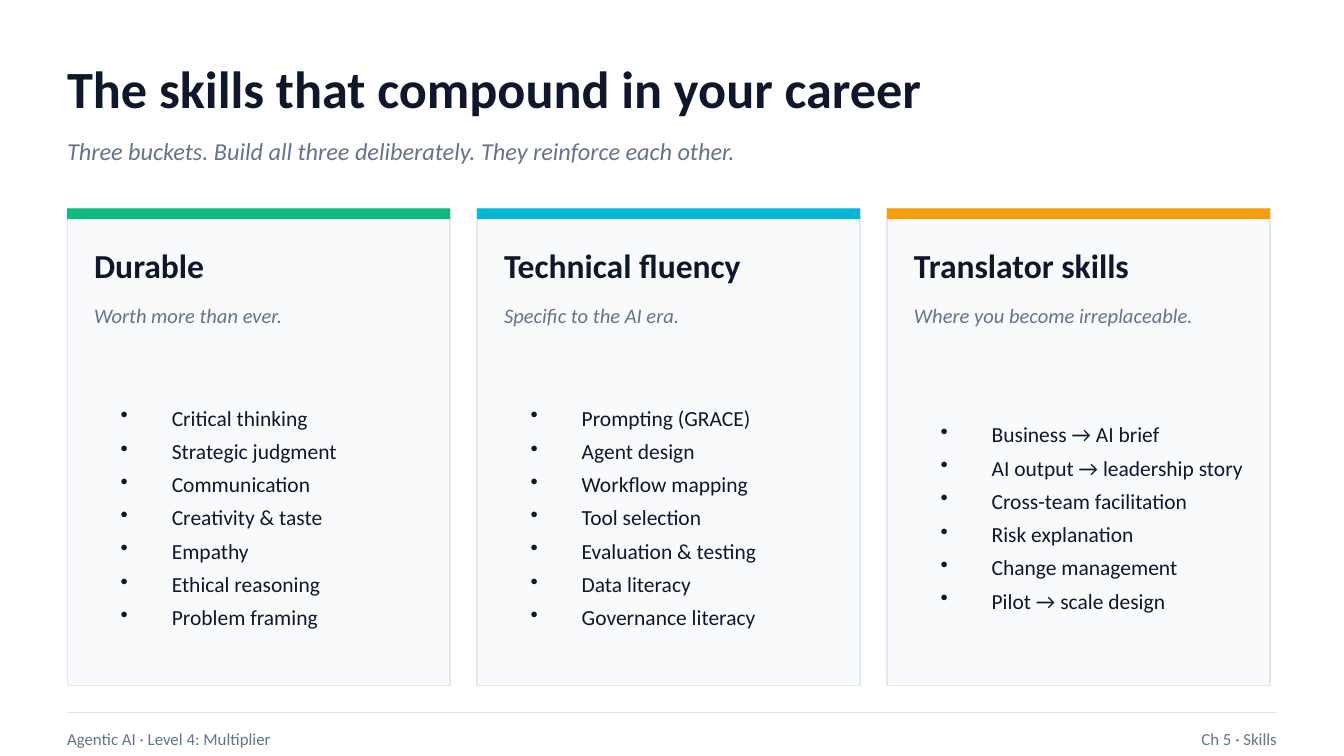
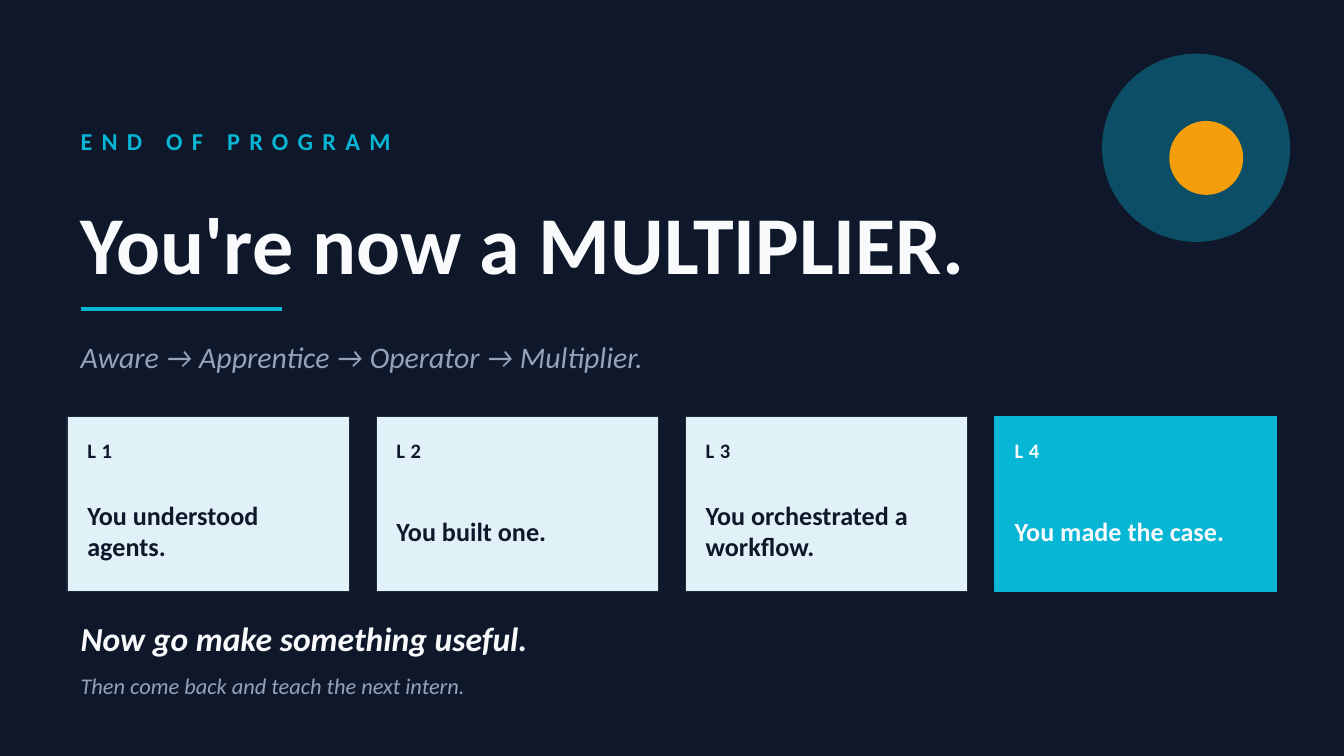
from dataclasses import dataclass

from lxml.etree import SubElement
from pptx import Presentation
from pptx.dml.color import RGBColor
from pptx.enum.shapes import MSO_CONNECTOR, MSO_SHAPE
from pptx.enum.text import MSO_ANCHOR, PP_ALIGN
from pptx.oxml.ns import qn
from pptx.util import Inches, Pt


@dataclass(frozen=True)
class Theme:
    font: str = "Calibri"
    ink: str = "0F172A"
    muted: str = "64748B"
    soft: str = "94A3B8"
    paper: str = "F8FAFC"
    white: str = "FFFFFF"
    rule: str = "E2E8F0"
    green: str = "10B981"
    cyan: str = "06B6D4"
    amber: str = "F59E0B"
    ice: str = "E0F2F7"
    edge: str = "1E293B"
    hero: float = 44
    title: float = 28
    heading: float = 18
    lead: float = 16
    step: float = 14
    subtitle: float = 13
    closing: float = 12
    bullet: float = 11.5
    label: float = 11
    footer: float = 9


T = Theme()
W, H = 10, 5.625
MARGIN = 0.5
INNER = W - 2 * MARGIN

# Content
SKILLS = {
    "title": "The skills that compound in your career",
    "subtitle": "Three buckets. Build all three deliberately. They reinforce each other.",
    "footer": ("Agentic AI · Level 4: Multiplier", "Ch 5 · Skills"),
    "buckets": [
        ("Durable", "Worth more than ever.", T.green,
         ["Critical thinking", "Strategic judgment", "Communication", "Creativity & taste",
          "Empathy", "Ethical reasoning", "Problem framing"]),
        ("Technical fluency", "Specific to the AI era.", T.cyan,
         ["Prompting (GRACE)", "Agent design", "Workflow mapping", "Tool selection",
          "Evaluation & testing", "Data literacy", "Governance literacy"]),
        ("Translator skills", "Where you become irreplaceable.", T.amber,
         ["Business → AI brief", "AI output → leadership story", "Cross-team facilitation",
          "Risk explanation", "Change management", "Pilot → scale design"]),
    ],
}
ENDING = {
    "eyebrow": "END OF PROGRAM",
    "title": "You're now a MULTIPLIER.",
    "path": "Aware → Apprentice → Operator → Multiplier.",
    "levels": ["You understood agents.", "You built one.",
               "You orchestrated a workflow.", "You made the case."],
    "closing": "Now go make something useful.",
    "aside": "Then come back and teach the next intern.",
}


# Drawing helpers
def rgb(color):
    return RGBColor.from_string(color)


def add_slide(prs, background):
    s = prs.slides.add_slide(prs.slide_layouts[6])
    s.background.fill.solid()
    s.background.fill.fore_color.rgb = rgb(background)
    return s


def add_bullet(p, indent=0.38):
    pPr = p._p.get_or_add_pPr()
    pPr.set("marL", str(Inches(indent)))
    pPr.set("indent", str(-Inches(indent)))
    SubElement(pPr, qn("a:buChar")).set("char", "•")


def add_text(s, text, x, y, w, h, size, color, bold=False, italic=False,
             align=PP_ALIGN.LEFT, spacing=0, bullets=False):
    """Add a middle-anchored text box; a list of strings gives one paragraph each."""
    tf = s.shapes.add_textbox(Inches(x), Inches(y), Inches(w), Inches(h)).text_frame
    tf.word_wrap = True
    tf.vertical_anchor = MSO_ANCHOR.MIDDLE
    if not bullets:
        tf.margin_left = tf.margin_right = tf.margin_top = tf.margin_bottom = 0
    lines = [text] if isinstance(text, str) else text
    for i, line in enumerate(lines):
        p = tf.add_paragraph() if i else tf.paragraphs[0]
        p.alignment = align
        if bullets:
            add_bullet(p)
            p.space_after = Pt(4)
        r = p.add_run()
        r.text = line
        r.font.name, r.font.size = T.font, Pt(size)
        r.font.bold, r.font.italic = bold, italic
        r.font.color.rgb = rgb(color)
        if spacing:
            r._r.get_or_add_rPr().set("spc", str(spacing * 100))


def add_block(s, x, y, w, h, fill, line=None, shape=MSO_SHAPE.RECTANGLE, opacity=None):
    sp = s.shapes.add_shape(shape, Inches(x), Inches(y), Inches(w), Inches(h))
    sp.shadow.inherit = False
    sp.fill.solid()
    sp.fill.fore_color.rgb = rgb(fill)
    if opacity is not None:
        clr = sp.fill._xPr.find(".//" + qn("a:srgbClr"))
        SubElement(clr, qn("a:alpha")).set("val", str(opacity * 1000))
    if line:
        sp.line.color.rgb = rgb(line)
        sp.line.width = Pt(0.75)
    else:
        sp.line.fill.background()


def add_rule(s, x, y, length, color, width):
    cn = s.shapes.add_connector(MSO_CONNECTOR.STRAIGHT, Inches(x), Inches(y),
                                Inches(x + length), Inches(y))
    cn.line.color.rgb = rgb(color)
    cn.line.width = Pt(width)
    SubElement(cn._element.spPr, qn("a:effectLst"))


def add_footer(s, left, right, split=5):
    add_rule(s, MARGIN, 5.3, INNER, T.rule, 0.75)
    add_text(s, left, MARGIN, 5.35, split, 0.3, T.footer, T.muted)
    add_text(s, right, MARGIN + split, 5.35, INNER - split, 0.3, T.footer, T.muted,
             align=PP_ALIGN.RIGHT)


# Slides
def build_skills(prs):
    s = add_slide(prs, T.white)
    add_text(s, SKILLS["title"], MARGIN, 0.35, INNER, 0.6, T.title, T.ink, bold=True)
    add_text(s, SKILLS["subtitle"], MARGIN, 0.95, INNER, 0.35, T.subtitle, T.muted, italic=True)

    # Three cards, each with a coloured top band
    top, width, height, gap, pad = 1.55, 2.85, 3.55, 0.2, 0.2
    for i, (name, note, accent, items) in enumerate(SKILLS["buckets"]):
        x = MARGIN + i * (width + gap)
        text_w = width - 0.3
        add_block(s, x, top, width, height, T.paper, T.rule)
        add_block(s, x, top, width, 0.08, accent)
        add_text(s, name, x + pad, top + 0.2, text_w, 0.45, T.heading, T.ink, bold=True)
        add_text(s, note, x + pad, top + 0.65, text_w, 0.3, T.label, T.muted, italic=True)
        add_text(s, items, x + pad + 0.1, top + 1.1, text_w - 0.1, 2.4, T.bullet, T.ink,
                 bullets=True)
    add_footer(s, *SKILLS["footer"])


def build_ending(prs):
    s = add_slide(prs, T.ink)
    left = MARGIN + 0.1

    # Corner discs
    add_block(s, 8.2, 0.4, 1.4, 1.4, T.cyan, shape=MSO_SHAPE.OVAL, opacity=35)
    add_block(s, 8.7, 0.9, 0.55, 0.55, T.amber, shape=MSO_SHAPE.OVAL)

    # Headline
    add_text(s, ENDING["eyebrow"], left, 0.85, 5, 0.4, T.subtitle, T.cyan, bold=True, spacing=5)
    add_text(s, ENDING["title"], left, 1.3, INNER, 1, T.hero, T.paper, bold=True)
    add_rule(s, left, 2.3, 1.5, T.cyan, 2.5)
    add_text(s, ENDING["path"], left, 2.45, INNER, 0.4, T.lead, T.soft, italic=True)

    # Level cards fill the inner width; the last one is highlighted
    levels = ENDING["levels"]
    top, gap, pad = 3.1, 0.2, 0.15
    width = (INNER - gap * (len(levels) - 1)) / len(levels)
    for i, line in enumerate(levels):
        x = MARGIN + i * (width + gap)
        last = i == len(levels) - 1
        fill, edge, color = (T.cyan, T.cyan, T.paper) if last else (T.ice, T.edge, T.ink)
        add_block(s, x, top, width, 1.3, fill, edge)
        add_text(s, f"L{i + 1}", x + pad, top + 0.1, width - 0.25, 0.3, T.label, color,
                 bold=True, spacing=3)
        add_text(s, line, x + pad, top + 0.45, width - 0.25, 0.8, T.step, color, bold=True)

    # Sign-off
    add_text(s, ENDING["closing"], left, 4.55, INNER, 0.4, T.heading, T.paper,
             bold=True, italic=True)
    add_text(s, ENDING["aside"], left, 4.95, INNER, 0.3, T.closing, T.soft, italic=True)


def main():
    prs = Presentation()
    prs.slide_width, prs.slide_height = Inches(W), Inches(H)
    build_skills(prs)
    build_ending(prs)
    prs.save("out.pptx")


if __name__ == "__main__":
    main()
